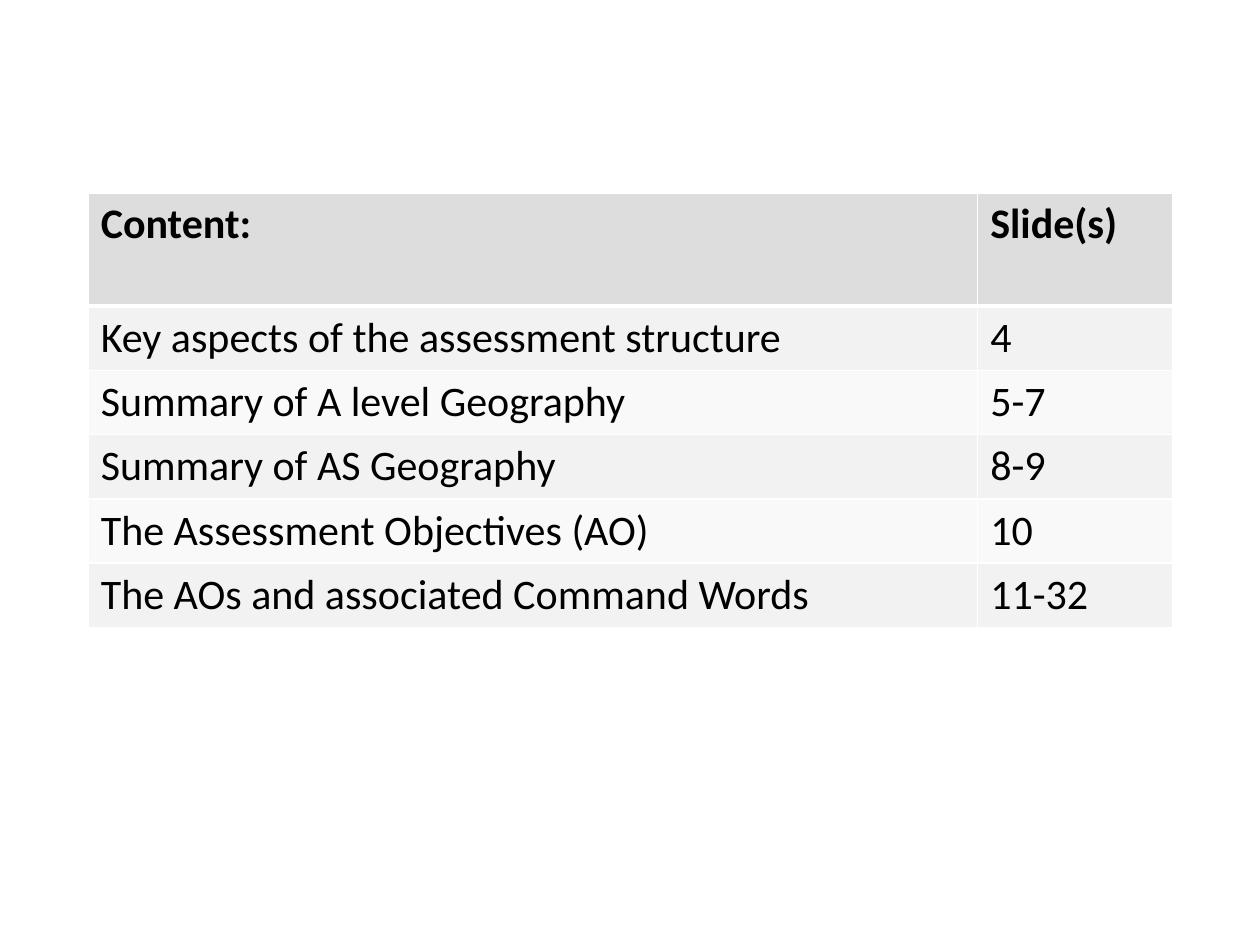
from lxml.etree import SubElement
from pptx import Presentation
from pptx.dml.color import RGBColor
from pptx.oxml.ns import qn
from pptx.util import Inches, Pt

BLACK = RGBColor(0x00, 0x00, 0x00)
WHITE = RGBColor(0xFF, 0xFF, 0xFF)
HEADER_GREY = RGBColor(0xDD, 0xDD, 0xDD)
BAND_GREYS = (RGBColor(0xF2, 0xF2, 0xF2), RGBColor(0xF9, 0xF9, 0xF9))

CONTENTS = [
    ("Content:", "Slide(s)"),
    ("Key aspects of the assessment structure", "4"),
    ("Summary of A level Geography", "5-7"),
    ("Summary of AS Geography", "8-9"),
    ("The Assessment Objectives (AO)", "10"),
    ("The AOs and associated Command Words", "11-32"),
]
COLUMN_WIDTHS = (7.06, 1.55)
HEADER_HEIGHT = 0.9
ROW_HEIGHT = 0.51


def write_text(text_frame, text, *, font, size, color, bold=False):
    paragraph = text_frame.paragraphs[0]
    run = paragraph.add_run()
    run.text = text
    run.font.name = font
    run.font.size = Pt(size)
    run.font.color.rgb = color
    run.font.bold = bold


def set_borders(cell, color, **widths):
    """Draw cell borders; widths are points keyed by L, R, T and B."""
    properties = cell._tc.get_or_add_tcPr()
    for position, side in enumerate("LRTB"):
        line = SubElement(properties, qn(f"a:ln{side}"), w=str(Pt(widths[side])))
        fill = SubElement(line, qn("a:solidFill"))
        SubElement(fill, qn("a:srgbClr"), val=str(color))
        properties.insert(position, line)


class SlideBuilder:
    def __init__(self, slide, font="Calibri", size=24):
        self.slide = slide
        self.font = font
        self.size = size

    def add_contents_table(self, left, top, rows):
        heights = [HEADER_HEIGHT] + [ROW_HEIGHT] * (len(rows) - 1)
        table = self.slide.shapes.add_table(
            len(rows), len(COLUMN_WIDTHS), Inches(left), Inches(top),
            Inches(sum(COLUMN_WIDTHS)), Inches(sum(heights)),
        ).table
        for column, width in zip(table.columns, COLUMN_WIDTHS):
            column.width = Inches(width)
        for row_index, (texts, height) in enumerate(zip(rows, heights)):
            table.rows[row_index].height = Inches(height)
            is_header = row_index == 0
            color = HEADER_GREY if is_header else BAND_GREYS[(row_index - 1) % 2]
            for cell, text in zip(table.rows[row_index].cells, texts):
                cell.fill.solid()
                cell.fill.fore_color.rgb = color
                set_borders(cell, WHITE, L=1, R=1,
                            T=3 if row_index == 1 else 1,
                            B=3 if is_header else 1)
                write_text(cell.text_frame, text, font=self.font,
                           size=self.size, color=BLACK, bold=is_header)


def main():
    presentation = Presentation()
    presentation.slide_width = Inches(10)
    presentation.slide_height = Inches(7.5)
    slide = presentation.slides.add_slide(presentation.slide_layouts[6])
    SlideBuilder(slide).add_contents_table(0.7, 1.53, CONTENTS)
    presentation.save("out.pptx")


if __name__ == "__main__":
    main()
